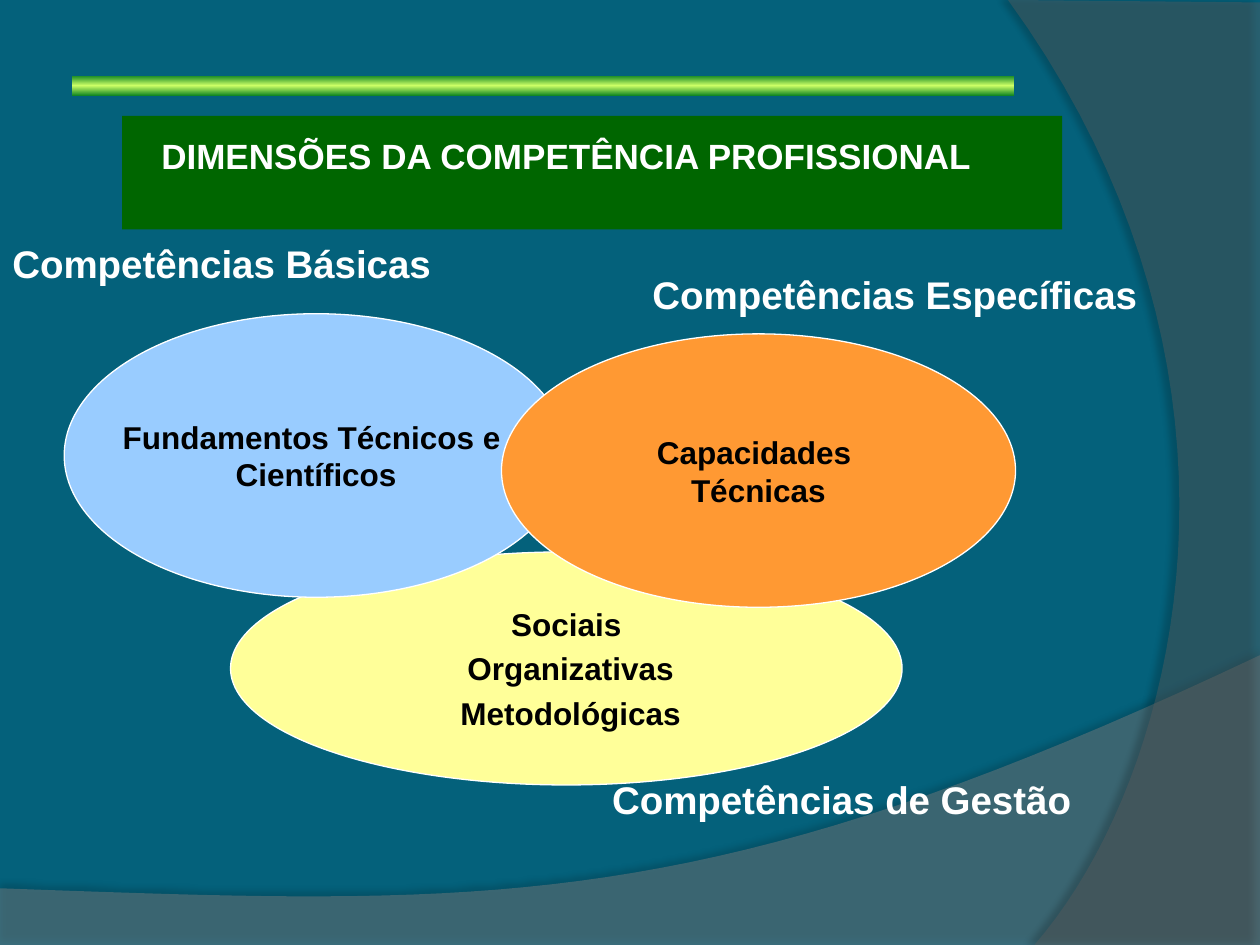
from copy import deepcopy
from typing import NamedTuple

from lxml.etree import SubElement
from pptx import Presentation
from pptx.dml.color import RGBColor
from pptx.enum.shapes import MSO_SHAPE as Kind
from pptx.enum.text import MSO_ANCHOR as Anchor
from pptx.enum.text import MSO_AUTO_SIZE as Fit
from pptx.enum.text import PP_ALIGN as Align
from pptx.oxml.ns import qn
from pptx.util import Inches, Pt

TEAL = RGBColor(0x04, 0x61, 0x7B)
GREY = RGBColor(0x7F, 0x7F, 0x7F)
SLATE = RGBColor(0x5E, 0x5E, 0x5E)
GREEN = RGBColor(0x00, 0x66, 0x00)
LEAF = RGBColor(0x11, 0x87, 0x22)
LIME = RGBColor(0xCC, 0xFF, 0x66)
YELLOW = RGBColor(0xFF, 0xFF, 0x99)
BLUE = RGBColor(0x99, 0xCC, 0xFF)
ORANGE = RGBColor(0xFF, 0x99, 0x33)
WHITE = RGBColor(0xFF, 0xFF, 0xFF)
BLACK = RGBColor(0x00, 0x00, 0x00)

WIDTH, HEIGHT = Inches(10), Inches(7.5)
COLS, ROWS = 100, 75  # grid of square cells


class Box(NamedTuple):
    col: float
    row: float
    cols: float
    rows: float

    def place(self) -> list[int]:
        """Left, top, width and height on the slide."""
        return [round(n * size) for n, size in
                zip(self, (WIDTH / COLS, HEIGHT / ROWS) * 2)]


class Oval(NamedTuple):
    box: Box
    fill: RGBColor
    lines: tuple[str, ...]
    gap: float = 0


class Label(NamedTuple):
    box: Box
    text: str


class Wave(NamedTuple):
    edge: tuple  # straight edge, as grid points
    curve: tuple  # Bézier segments that follow it, three points each
    fill: RGBColor
    alpha: int
    shade: int  # opacity of the shadow
    dist: float
    angle: int


WAVES = (
    Wave(((0, 70.5), (0, 75.1), (100, 75.1), (100, 52)),
         (((55.9, 72.9), (39.1, 71.9), (0, 70.5)),),
         GREY, 45, 35, 3.5, 270),
    Wave(((100, 0.2), (100, 75), (82.1, 75)),
         (((93.5, 61.9), (101.8, 30), (80, 0)),),
         SLATE, 40, 45, 4, 180),
)
BACK = (
    Oval(Box(18.3, 43.8, 53.3, 18.5), YELLOW,
         ("Sociais", " Organizativas", " Metodológicas"), 3.6),
    Oval(Box(5.1, 24.9, 40, 22.5), BLUE,
         ("Fundamentos Técnicos e ", "Científicos")),
)
FRONT = Oval(Box(39.8, 26.5, 40.8, 21.7), ORANGE, ("Capacidades ", "Técnicas"))
LABELS = (
    Label(Box(47.6, 61.1, 39.4, 4.7), "Competências de Gestão"),
    Label(Box(50.8, 21, 42.1, 4.7), "Competências Específicas"),
    Label(Box(0, 18.6, 42.1, 4.7), "Competências Básicas"),
)


def write(par, text: str, size: float, color: RGBColor) -> None:
    run = par.add_run()
    run.text = text
    run.font.name = "Arial"
    run.font.size = Pt(size)
    run.font.bold = True
    run.font.color.rgb = color


def trace(wave: Wave, steps: int = 40) -> list[tuple[float, float]]:
    """Grid points of the outline, with its curves sampled."""
    points = list(wave.edge)
    for b, c, d in wave.curve:
        a = points[-1]
        for i in range(1, steps + 1):
            t = i / steps
            u = 1 - t
            points.append(tuple(
                u**3 * p + 3 * u * u * t * q + 3 * u * t * t * r + t**3 * s
                for p, q, r, s in zip(a, b, c, d)))
    return points


def fade(color, share: int) -> None:
    SubElement(color, qn("a:alpha"), val=str(share * 1000))


def draw_wave(shapes, wave: Wave) -> None:
    points = [(round(x * WIDTH / COLS), round(y * HEIGHT / ROWS))
              for x, y in trace(wave)]
    pen = shapes.build_freeform(*points[0])
    pen.add_line_segments(points[1:], close=True)
    shape = pen.convert_to_shape()
    shape.fill.solid()
    shape.fill.fore_color.rgb = wave.fill
    shape.line.fill.background()
    shape.shadow.inherit = False
    props = shape._element.spPr
    fade(props.find(qn("a:solidFill"))[0], wave.alpha)
    glow = SubElement(props.find(qn("a:effectLst")), qn("a:outerShdw"),
                      blurRad=str(Pt(4)), dist=str(Pt(wave.dist)),
                      dir=str(wave.angle * 60000), algn="ctr", rotWithShape="0")
    fade(SubElement(glow, qn("a:srgbClr"), val=str(BLACK)), wave.shade)


def draw_oval(shapes, oval: Oval) -> None:
    shape = shapes.add_shape(Kind.OVAL, *oval.box.place())
    shape.shadow.inherit = False
    shape.fill.solid()
    shape.fill.fore_color.rgb = oval.fill
    shape.line.color.rgb = WHITE
    shape.line.width = Pt(0.75)
    frame = shape.text_frame
    frame.word_wrap = False
    frame.vertical_anchor = Anchor.MIDDLE
    for i, text in enumerate(oval.lines):
        par = frame.add_paragraph() if i else frame.paragraphs[0]
        par.alignment = Align.CENTER
        par.space_before = Pt(oval.gap if i else 0)
        write(par, text, 18, BLACK)


def draw_title(slide) -> None:
    title = slide.shapes.title
    title.left, title.top, title.width, title.height = Box(
        9.7, 9.2, 74.6, 9).place()
    title.fill.solid()
    title.fill.fore_color.rgb = GREEN
    frame = title.text_frame
    frame.auto_size = Fit.NONE
    frame.word_wrap = True
    frame.vertical_anchor = Anchor.TOP
    frame.margin_left = Inches(0.31)
    par = frame.paragraphs[0]
    par.alignment = Align.LEFT
    par.line_spacing = 1.3
    write(par, "DIMENSÕES DA COMPETÊNCIA PROFISSIONAL", 20, WHITE)
    slide.shapes._spTree.append(title._element)  # bring to the front


def draw_bar(shapes) -> None:
    bar = shapes.add_shape(Kind.RECTANGLE, *Box(5.7, 6, 74.8, 1.6).place())
    bar.shadow.inherit = False
    bar.line.fill.background()
    bar.fill.gradient()
    bar.fill.gradient_angle = 90
    stops = bar._element.spPr.find(qn("a:gradFill")).find(qn("a:gsLst"))
    stops.append(deepcopy(stops[0]))
    shades = ((0, LEAF), (0.5, LIME), (1, LEAF))
    for stop, (spot, color) in zip(bar.fill.gradient_stops, shades):
        stop.position = spot
        stop.color.rgb = color


def draw_label(shapes, label: Label) -> None:
    frame = shapes.add_textbox(*label.box.place()).text_frame
    frame.word_wrap = True
    frame.auto_size = Fit.SHAPE_TO_FIT_TEXT
    write(frame.paragraphs[0], label.text, 22, WHITE)


def main() -> None:
    deck = Presentation()
    deck.slide_width, deck.slide_height = WIDTH, HEIGHT
    slide = deck.slides.add_slide(deck.slide_layouts[5])
    shapes = slide.shapes

    # Background
    slide.background.fill.solid()
    slide.background.fill.fore_color.rgb = TEAL
    for wave in WAVES:
        draw_wave(shapes, wave)

    # Diagram and heading
    for oval in BACK:
        draw_oval(shapes, oval)
    draw_title(slide)
    draw_bar(shapes)
    for label in LABELS:
        draw_label(shapes, label)
    draw_oval(shapes, FRONT)

    deck.save("out.pptx")


if __name__ == "__main__":
    main()
